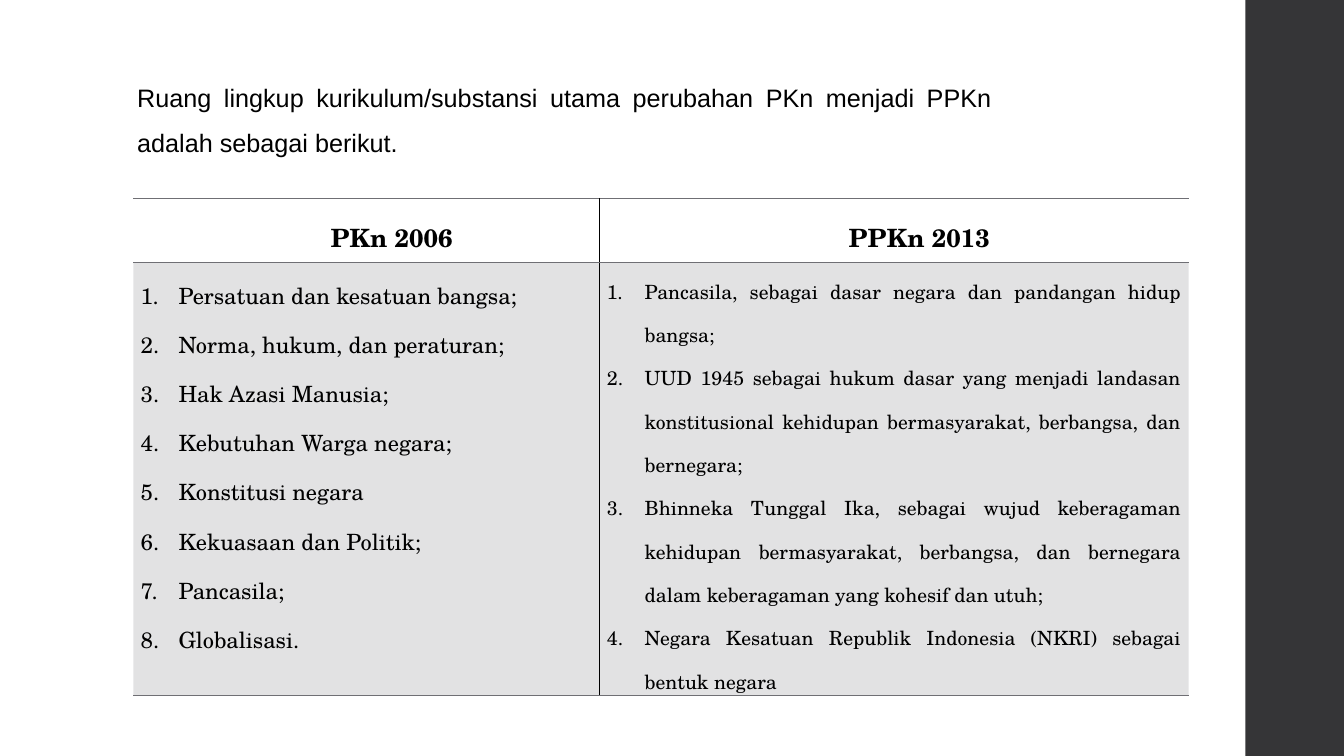
from dataclasses import dataclass

from lxml import etree
from pptx import Presentation
from pptx.dml.color import RGBColor
from pptx.enum.shapes import MSO_SHAPE
from pptx.enum.text import MSO_ANCHOR, MSO_AUTO_SIZE, PP_ALIGN
from pptx.oxml.ns import qn
from pptx.slide import Slide
from pptx.table import _Cell
from pptx.text.text import TextFrame
from pptx.util import Emu, Pt

RECTANGLE = MSO_SHAPE.RECTANGLE
TOP = MSO_ANCHOR.TOP
NO_AUTOFIT = MSO_AUTO_SIZE.NONE
CENTER = PP_ALIGN.CENTER
JUSTIFY = PP_ALIGN.JUSTIFY

BLACK = RGBColor(0x00, 0x00, 0x00)
GREY = RGBColor(0x6F, 0x6F, 0x74)
CHARCOAL = RGBColor(0x35, 0x35, 0x37)

SANS = "Arial"
SERIF = "TeX Gyre Schola"
EMU_PER_PX = 9525
PAGE_WIDTH, PAGE_HEIGHT = 1280, 720
SIDEBAR_LEFT = 1186
TABLE_LEFT, TABLE_TOP = 127, 189
HEADER_HEIGHT, BODY_HEIGHT = 61, 344
CELL_INSET = 7
BODY_OPACITY = 20000

INTRO = ("Ruang lingkup kurikulum/substansi utama perubahan PKn menjadi PPKn "
         "adalah sebagai berikut.")


@dataclass(frozen=True)
class TextStyle:
    font: str
    size: int
    align: PP_ALIGN
    margin: int
    indent: int = 0
    bold: bool = False
    numbered: bool = False
    space_after: int = 0


@dataclass(frozen=True)
class Curriculum:
    heading: str
    width: int
    size: int
    topics: tuple[str, ...]


INTRO_STYLE = TextStyle(SANS, 18, JUSTIFY, 47, space_after=10)
HEADING_STYLE = TextStyle(SERIF, 18, CENTER, 48, bold=True)

CURRICULA = (
    Curriculum("PKn 2006", 444, 16, (
        "Persatuan dan kesatuan bangsa;",
        "Norma, hukum, dan peraturan;",
        "Hak Azasi Manusia;",
        "Kebutuhan Warga negara;",
        "Konstitusi negara",
        "Kekuasaan dan Politik;",
        "Pancasila;",
        "Globalisasi.",
    )),
    Curriculum("PPKn 2013", 561, 14, (
        "Pancasila, sebagai dasar negara dan pandangan hidup bangsa;",
        "UUD 1945 sebagai hukum dasar yang menjadi landasan konstitusional "
        "kehidupan bermasyarakat, berbangsa, dan bernegara;",
        "Bhinneka Tunggal Ika, sebagai wujud keberagaman kehidupan "
        "bermasyarakat, berbangsa, dan bernegara dalam keberagaman yang "
        "kohesif dan utuh;",
        "Negara Kesatuan Republik Indonesia (NKRI) sebagai bentuk negara",
    )),
)


def px(length: int) -> Emu:
    return Emu(length * EMU_PER_PX)


def write_text(frame: TextFrame, lines: tuple[str, ...], style: TextStyle) -> None:
    for index, line in enumerate(lines):
        para = frame.add_paragraph() if index else frame.paragraphs[0]
        para.alignment = style.align
        para.line_spacing = 1.5
        para.space_after = Pt(style.space_after)
        properties = para._p.get_or_add_pPr()
        properties.set("marL", str(px(style.margin)))
        properties.set("indent", str(px(style.indent)))
        if style.numbered:
            etree.SubElement(properties, qn("a:buAutoNum"), type="arabicPeriod")
        span = para.add_run()
        span.text = line
        span.font.name = style.font
        span.font.size = Pt(style.size)
        span.font.bold = style.bold
        span.font.color.rgb = BLACK


def set_borders(cell: _Cell, edges: dict[str, RGBColor]) -> None:
    properties = cell._tc.get_or_add_tcPr()
    for edge in ("lnL", "lnR", "lnT", "lnB"):
        line = etree.SubElement(properties, qn(f"a:{edge}"), w=str(Pt(1)))
        if edge in edges:
            fill = etree.SubElement(line, qn("a:solidFill"))
            etree.SubElement(fill, qn("a:srgbClr"), val=str(edges[edge]))
        else:
            etree.SubElement(line, qn("a:noFill"))


def fill_translucent(cell: _Cell) -> None:
    cell.fill.solid()
    cell.fill.fore_color.rgb = GREY
    color = cell._tc.tcPr.find(f"{qn('a:solidFill')}/{qn('a:srgbClr')}")
    etree.SubElement(color, qn("a:alpha"), val=str(BODY_OPACITY))


def draw_sidebar(page: Slide) -> None:
    sidebar = page.shapes.add_shape(
        RECTANGLE, px(SIDEBAR_LEFT), 0, px(PAGE_WIDTH - SIDEBAR_LEFT), px(PAGE_HEIGHT))
    sidebar.shadow.inherit = False
    sidebar.fill.solid()
    sidebar.fill.fore_color.rgb = CHARCOAL
    sidebar.line.fill.background()


def draw_intro(page: Slide) -> None:
    box = page.shapes.title
    box.left, box.top, box.width, box.height = px(74), px(59), px(880), px(91)
    frame = box.text_frame
    frame.word_wrap = True
    frame.auto_size = NO_AUTOFIT
    frame.vertical_anchor = TOP
    write_text(frame, (INTRO,), INTRO_STYLE)


def draw_comparison(page: Slide) -> None:
    width = sum(curriculum.width for curriculum in CURRICULA)
    table = page.shapes.add_table(
        2, len(CURRICULA), px(TABLE_LEFT), px(TABLE_TOP),
        px(width), px(HEADER_HEIGHT + BODY_HEIGHT)).table
    table.first_row = False
    table.horz_banding = False
    table.rows[0].height = px(HEADER_HEIGHT)
    table.rows[1].height = px(BODY_HEIGHT)
    for index, curriculum in enumerate(CURRICULA):
        table.columns[index].width = px(curriculum.width)
        divider = "lnL" if index else "lnR"
        header, body = table.cell(0, index), table.cell(1, index)
        for cell in (header, body):
            cell.margin_left = cell.margin_right = px(CELL_INSET)
            cell.margin_top = cell.margin_bottom = 0
            cell.vertical_anchor = TOP
            set_borders(cell, {"lnT": GREY, "lnB": GREY, divider: BLACK})
        header.fill.background()
        fill_translucent(body)
        write_text(header.text_frame, (curriculum.heading,), HEADING_STYLE)
        topic_style = TextStyle(
            SERIF, curriculum.size, JUSTIFY, 36, indent=-36, numbered=True)
        write_text(body.text_frame, curriculum.topics, topic_style)


def main() -> None:
    deck = Presentation()
    deck.slide_width, deck.slide_height = px(PAGE_WIDTH), px(PAGE_HEIGHT)
    page = deck.slides.add_slide(deck.slide_layouts.get_by_name("Title Only"))
    draw_sidebar(page)
    draw_comparison(page)
    draw_intro(page)
    deck.save("out.pptx")


if __name__ == "__main__":
    main()
